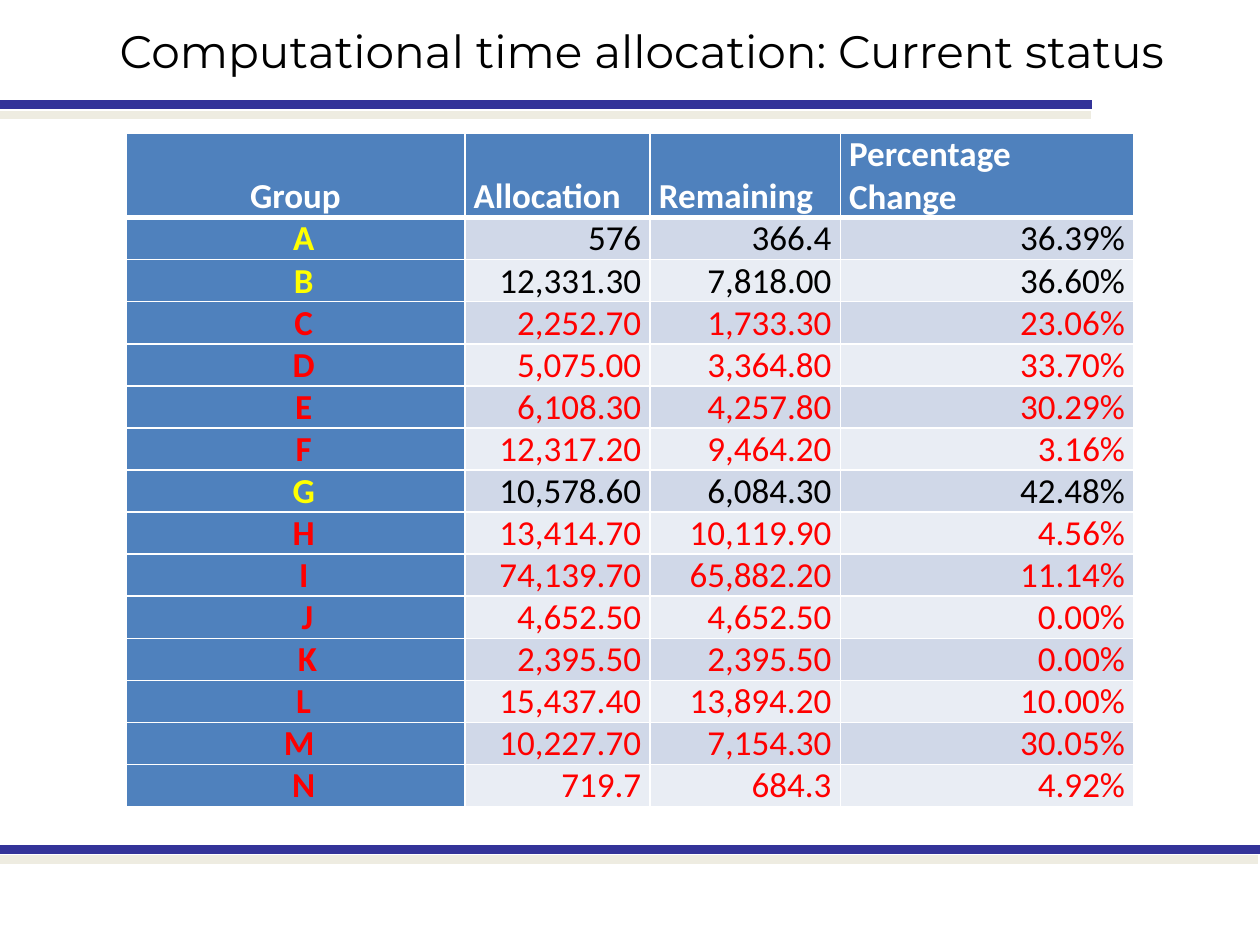
from lxml import etree
from pptx import Presentation
from pptx.dml.color import RGBColor
from pptx.enum.shapes import MSO_CONNECTOR
from pptx.enum.text import MSO_ANCHOR, MSO_AUTO_SIZE, PP_ALIGN
from pptx.oxml import parse_xml
from pptx.oxml.ns import nsdecls, qn
from pptx.util import Inches, Pt

COLORS = {
    "rule": "333399", "rule_shadow": "EEECE1", "header": "4F81BD",
    "odd": "D0D8E8", "even": "E9EDF4", "border": "FFFFFF",
    "white": "FFFFFF", "black": "000000", "red": "FF0000", "yellow": "FFFF00",
}
TITLE = "Computational time allocation: Current status"
HEADERS = ["Group", "Allocation", "Remaining", "Percentage Change"]
ALLOCATIONS = [
    ("A", "576", "366.4", "36.39%"),
    ("B", "12,331.30", "7,818.00", "36.60%"),
    ("C", "2,252.70", "1,733.30", "23.06%"),
    ("D", "5,075.00", "3,364.80", "33.70%"),
    ("E", "6,108.30", "4,257.80", "30.29%"),
    ("F", "12,317.20", "9,464.20", "3.16%"),
    ("G", "10,578.60", "6,084.30", "42.48%"),
    ("H", "13,414.70", "10,119.90", "4.56%"),
    ("I", "74,139.70", "65,882.20", "11.14%"),
    ("J", "4,652.50", "4,652.50", "0.00%"),
    ("K", "2,395.50", "2,395.50", "0.00%"),
    ("L", "15,437.40", "13,894.20", "10.00%"),
    ("M", "10,227.70", "7,154.30", "30.05%"),
    ("N", "719.7", "684.3", "4.92%"),
]
ON_TRACK = {"A", "B", "G"}
COLUMN_WIDTHS = [2.69, 1.47, 1.51, 2.33]
HEADER_HEIGHT, ROW_HEIGHT = 0.65, 0.33
CELL_MARGIN = 0.07
GROUP_INDENT = 0.13
INDENT_EXCEPTIONS = {"J": 0.19, "K": 0.19, "M": 0.06}
RULES = [(0.83, 8.67), (6.74, 10)]  # y, right end


def rgb(name):
    return RGBColor.from_string(COLORS[name])


def add_rule(slide, y, right):
    rule = slide.shapes.add_connector(
        MSO_CONNECTOR.STRAIGHT, 0, Inches(y), Inches(right), Inches(y))
    rule.line.color.rgb = rgb("rule")
    rule.line.width = Pt(5)
    effects = etree.SubElement(rule._element.spPr, qn("a:effectLst"))
    shadow = etree.SubElement(effects, qn("a:outerShdw"), blurRad="0",
                              dist=str(Pt(6.1)), dir=str(99 * 60000),
                              algn="ctr", rotWithShape="0")
    etree.SubElement(shadow, qn("a:srgbClr"), val=COLORS["rule_shadow"])


def add_title(slide):
    box = slide.shapes.add_textbox(
        Inches(0.42), Inches(0.13), Inches(9.36), Inches(0.54))
    frame = box.text_frame
    frame.word_wrap = False
    frame.auto_size = MSO_AUTO_SIZE.SHAPE_TO_FIT_TEXT
    paragraph = frame.paragraphs[0]
    paragraph.text = TITLE
    paragraph.alignment = PP_ALIGN.CENTER
    paragraph.font.name = "Montserrat"
    paragraph.font.size = Pt(26)
    paragraph.font.color.rgb = rgb("black")


def set_borders(cell, top, bottom):
    """Draw all four cell borders; top and bottom widths are in points."""
    properties = cell._tc.get_or_add_tcPr()
    for side, width in (("L", 1), ("R", 1), ("T", top), ("B", bottom)):
        properties.append(parse_xml(
            f'<a:ln{side} {nsdecls("a")} w="{Pt(width)}"><a:solidFill>'
            f'<a:srgbClr val="{COLORS["border"]}"/></a:solidFill></a:ln{side}>'))


def fill_cell(cell, text, fill, color, bold, alignment, indent=0):
    cell.fill.solid()
    cell.fill.fore_color.rgb = rgb(fill)
    cell.vertical_anchor = MSO_ANCHOR.BOTTOM
    cell.margin_left = Inches(CELL_MARGIN + indent)
    cell.margin_right = Inches(CELL_MARGIN)
    cell.margin_top = cell.margin_bottom = 0
    paragraph = cell.text_frame.paragraphs[0]
    paragraph.text = text
    paragraph.alignment = alignment
    font = paragraph.font
    font.name, font.size, font.bold = "Calibri", Pt(20), bold
    font.color.rgb = rgb(color)


def add_allocation_table(slide):
    rows = len(ALLOCATIONS) + 1
    table = slide.shapes.add_table(
        rows, len(HEADERS), Inches(1), Inches(1.06), Inches(sum(COLUMN_WIDTHS)),
        Inches(HEADER_HEIGHT + ROW_HEIGHT * len(ALLOCATIONS))).table
    for column, width in zip(table.columns, COLUMN_WIDTHS):
        column.width = Inches(width)
    for r, row in enumerate(table.rows):
        row.height = Inches(ROW_HEIGHT if r else HEADER_HEIGHT)
        for cell in row.cells:
            set_borders(cell, top=3 if r == 1 else 1, bottom=1 if r else 3)

    for c, header in enumerate(HEADERS):
        fill_cell(table.cell(0, c), header, "header", "white", True,
                  PP_ALIGN.LEFT if c else PP_ALIGN.CENTER)
    for r, (group, *figures) in enumerate(ALLOCATIONS, 1):
        on_track = group in ON_TRACK
        fill_cell(table.cell(r, 0), group, "header",
                  "yellow" if on_track else "red", True, PP_ALIGN.CENTER,
                  INDENT_EXCEPTIONS.get(group, GROUP_INDENT))
        for c, figure in enumerate(figures, 1):
            fill_cell(table.cell(r, c), figure, "odd" if r % 2 else "even",
                      "black" if on_track else "red", False, PP_ALIGN.RIGHT)


def main():
    deck = Presentation()
    deck.slide_width, deck.slide_height = Inches(10), Inches(7.5)
    slide = deck.slides.add_slide(deck.slide_layouts[6])
    for y, right in RULES:
        add_rule(slide, y, right)
    add_title(slide)
    add_allocation_table(slide)
    deck.save("out.pptx")


if __name__ == "__main__":
    main()
